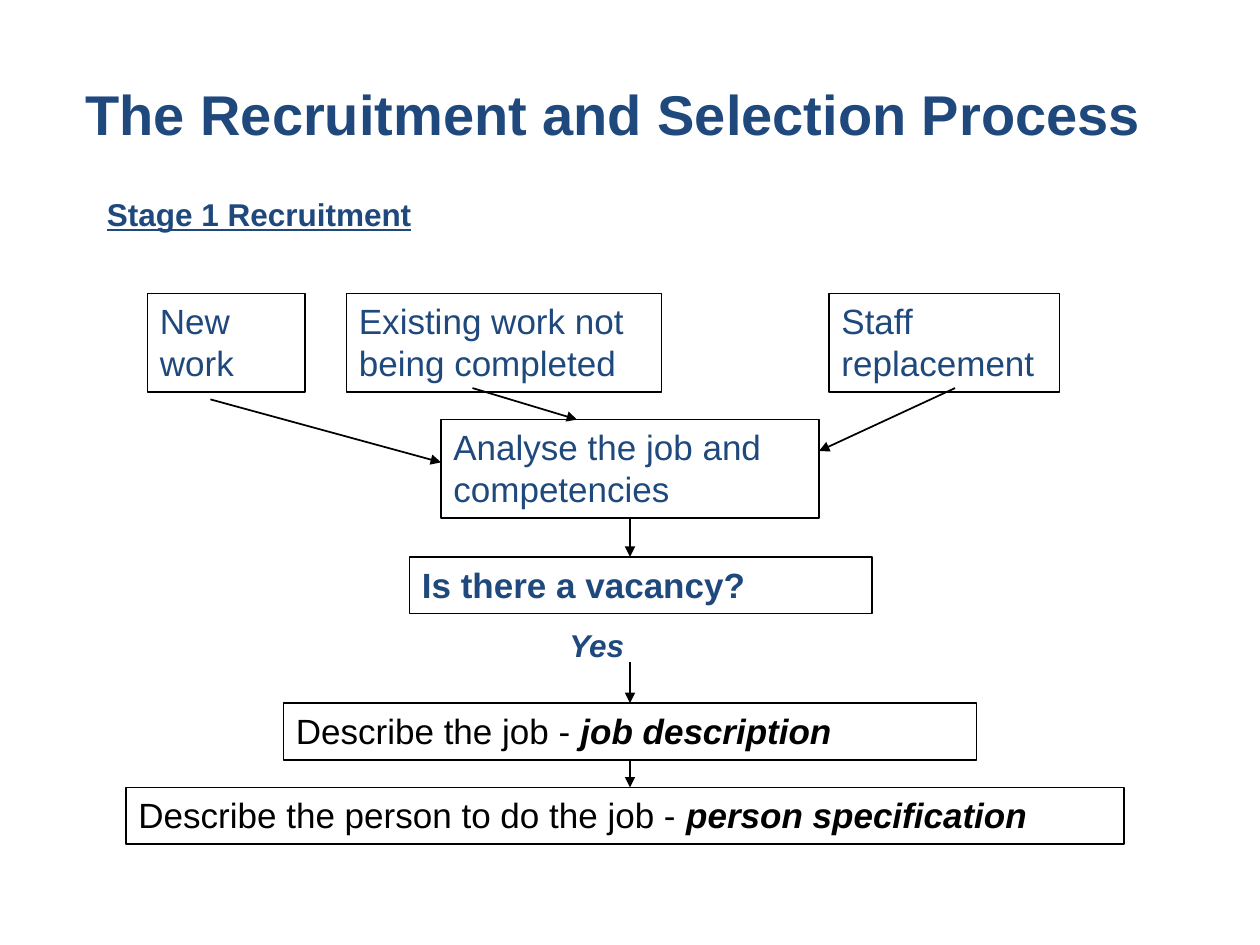
"""Build the recruitment and selection process flowchart slide."""
from dataclasses import dataclass

from lxml import etree
from pptx import Presentation
from pptx.dml.color import RGBColor
from pptx.enum.shapes import MSO_CONNECTOR, MSO_SHAPE
from pptx.enum.text import MSO_ANCHOR, MSO_AUTO_SIZE, PP_ALIGN
from pptx.oxml.ns import qn
from pptx.util import Inches, Pt

RECT = MSO_SHAPE.RECTANGLE
STRAIGHT = MSO_CONNECTOR.STRAIGHT
TOP, LEFT = MSO_ANCHOR.TOP, PP_ALIGN.LEFT
GROW = MSO_AUTO_SIZE.SHAPE_TO_FIT_TEXT
TOP_SITE, BOTTOM_SITE = 0, 2
BOX_1, BOX_2 = 0.45, 0.78


@dataclass(frozen=True)
class Theme:
    font: str = "Arial"
    navy: RGBColor = RGBColor(0x1F, 0x49, 0x7D)
    black: RGBColor = RGBColor(0, 0, 0)
    title: int = 32
    body: int = 20
    label: int = 18
    line: int = 1


class Flowchart:
    def __init__(self, slide, theme):
        self.s = slide
        self.theme = theme

    def add_text(self, sp, runs, size, color):
        tf = sp.text_frame
        tf.word_wrap = True
        tf.auto_size = GROW
        tf.vertical_anchor = TOP
        p = tf.paragraphs[0]
        p.alignment = LEFT
        for text, style in runs:
            r = p.add_run()
            r.text = text
            r.font.name = self.theme.font
            r.font.size = Pt(size)
            r.font.color.rgb = color
            r.font.bold = "b" in style
            r.font.italic = "i" in style
            r.font.underline = "u" in style

    def label(self, at, text, size, style):
        sp = self.s.shapes.add_textbox(*map(Inches, at))
        self.add_text(sp, [(text, style)], size, self.theme.navy)

    def box(self, at, *runs, color=None):
        sp = self.s.shapes.add_shape(RECT, *map(Inches, at))
        sp.shadow.inherit = False
        sp.fill.background()
        sp.line.color.rgb = self.theme.black
        sp.line.width = Pt(self.theme.line)
        self.add_text(sp, runs, self.theme.body, color or self.theme.navy)
        return sp

    def arrow(self, start, end, source=None, target=None):
        c = self.s.shapes.add_connector(STRAIGHT, *map(Inches, start + end))
        if source is not None:
            c.begin_connect(source, BOTTOM_SITE)
        if target is not None:
            c.end_connect(target, TOP_SITE)
        c.line.color.rgb = self.theme.black
        c.line.width = Pt(self.theme.line)
        props = c._element.spPr
        etree.SubElement(props.find(qn("a:ln")), qn("a:tailEnd"), type="triangle")
        etree.SubElement(props, qn("a:effectLst"))


def main():
    prs = Presentation()
    prs.slide_width, prs.slide_height = Inches(10), Inches(7.5)
    theme = Theme()
    chart = Flowchart(prs.slides.add_slide(prs.slide_layouts[6]), theme)

    chart.label((0.58, 0.58, 8.58, 0.63), "The Recruitment and Selection Process", theme.title, "b")
    chart.label((0.75, 1.5, 3.58, 0.5), "Stage 1 Recruitment", theme.label, "bu")

    for left, width, reason in (
        (1.17, 1.25, "New work"),
        (2.75, 2.5, "Existing work not being completed"),
        (6.58, 1.83, "Staff replacement"),
    ):
        chart.box((left, 2.33, width, BOX_2), (reason, ""))

    analysis = chart.box((3.5, 3.33, 3, BOX_2), ("Analyse the job and competencies", ""))
    chart.box((3.25, 4.42, 3.67, BOX_1), ("Is there a vacancy?", "b"))
    chart.label((4.42, 4.92, 1.08, 0.4), "Yes", theme.label, "bi")
    job = chart.box((2.25, 5.58, 5.5, BOX_1), ("Describe the job - ", ""),
                    ("job description", "bi"), color=theme.black)
    chart.box((1, 6.25, 7.92, BOX_1), ("Describe the person to do the job - ", ""),
              ("person specification", "bi"), color=theme.black)

    chart.arrow((1.67, 3.17), (3.5, 3.67))
    chart.arrow((3.75, 3.08), (4.58, 3.33))
    chart.arrow((7.58, 3.08), (6.5, 3.58))
    chart.arrow((5, 4.08), (5, 4.42), source=analysis)
    chart.arrow((5, 5.25), (5, 5.58), target=job)
    chart.arrow((5, 6), (5, 6.25), source=job)

    prs.save("out.pptx")


if __name__ == "__main__":
    main()
